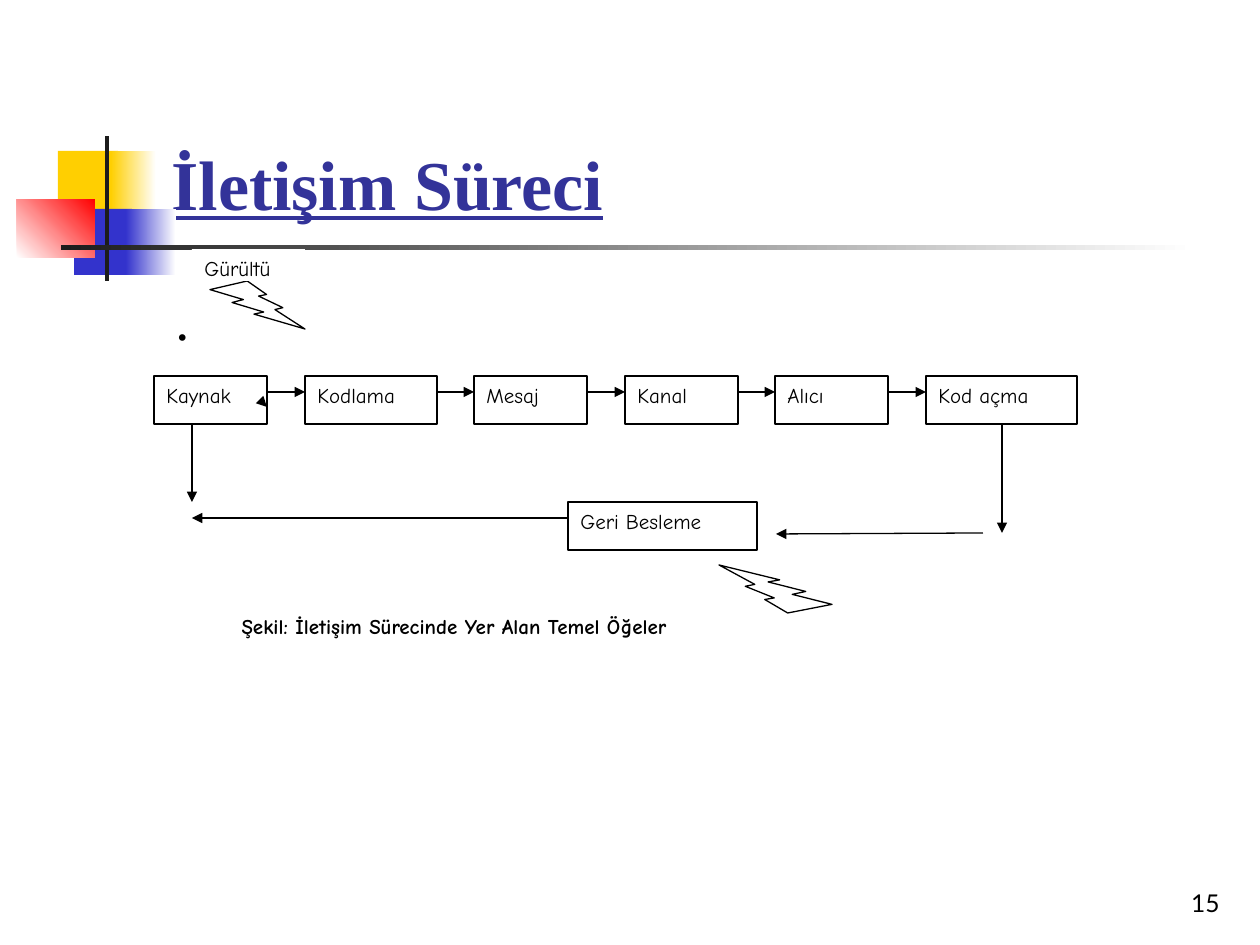
from pptx import Presentation
from pptx import util as u
from pptx.dml.color import RGBColor
from pptx.enum import shapes, text
from pptx.oxml import parse_xml
from pptx.oxml.ns import nsdecls

PX = 914400 / 126
UNIT = 18.83
FLOW_LEFT, FLOW_TOP, BOX_HEIGHT = 154, 376, 48

THEME = {
    "white": "FFFFFF", "black": "000000", "title": "333399",
    "yellow": "FFCF01", "blue": "3333CC", "red": "FF0000", "dark": "1C1C1C",
    "serif": "Times New Roman", "label": "Comic Neue", "number": "Lato",
    "title_size": 40, "body_size": 32, "number_size": 14, "label_size": 12,
    "line": 0.75,
}

TITLE = "İletişim Süreci"
TITLE_PLACE = (159, 29, 1073, 202)
DECORATION = [
    ((58, 151, 60, 66), ["yellow"], 0),
    ((111, 151, 45, 66), ["yellow", "white"], 0),
    ((74, 209, 58, 66), ["blue"], 0),
    ((126, 209, 50, 66), ["blue", "white"], 0),
    ((17, 199, 78, 59), ["white", "red"], 45),
    ((105, 136, 4, 145), ["dark"], 0),
    ((61, 245, 1134, 5), ["dark", "white"], 0),
]
STEPS = [("Kaynak", 6), ("Kodlama", 7), ("Mesaj", 6),
         ("Kanal", 6), ("Alıcı", 6), ("Kod açma", 8)]
STEP_GAP = 2
FEEDBACK = ("Geri Besleme", (568, 502, 189, BOX_HEIGHT))
FEEDBACK_ARROWS = [
    ((266, 406), (267, 407)),
    ((1002, 424), (1002, 533)),
    ((983, 533), (776, 534)),
    ((568, 518), (192, 518)),
    ((192, 424), (192, 502)),
]
NOISE = ("Gürültü", (192, 249, 113, 32))
BOLTS = [((210, 281, 95, 48), 0), ((719, 565, 113, 48), 180)]
CAPTION = ("Şekil: İletişim Sürecinde Yer Alan Temel Öğeler", (171, 607, 566, 48))
BODY = (".", (163, 278, 1071, 567))
NUMBER = ("15", (970, 861, 262, 63))


def emu(*lengths):
    return [u.Emu(round(length * PX)) for length in lengths]


def color(name):
    return RGBColor.from_string(THEME[name])


def write(shape, words, font, size, ink="black", bold=False,
          align=text.PP_ALIGN.LEFT, anchor=text.MSO_ANCHOR.TOP):
    frame = shape.text_frame
    frame.text = words
    frame.word_wrap = True
    frame.auto_size = text.MSO_AUTO_SIZE.NONE
    frame.vertical_anchor = anchor
    paragraph = frame.paragraphs[0]
    paragraph.alignment = align
    paragraph.font.name = THEME[font]
    paragraph.font.size = u.Pt(THEME[size])
    paragraph.font.bold = bold
    paragraph.font.color.rgb = color(ink)
    return paragraph


def add_block(slide, place, fills=("white",), angle=0, outlined=False,
              kind=shapes.MSO_SHAPE.RECTANGLE):
    shape = slide.shapes.add_shape(kind, *emu(*place))
    shape.shadow.inherit = False
    if len(fills) == 1:
        shape.fill.solid()
        shape.fill.fore_color.rgb = color(fills[0])
    else:
        shape.fill.gradient()
        shape.fill.gradient_angle = angle
        for stop, name, position in zip(shape.fill.gradient_stops, fills, (0, 1)):
            stop.color.rgb = color(name)
            stop.position = position
    if outlined:
        shape.line.color.rgb = color("black")
        shape.line.width = u.Pt(THEME["line"])
    else:
        shape.line.fill.background()
    return shape


def add_label(slide, words, place, outlined=True, **style):
    write(add_block(slide, place, outlined=outlined), words, "label", "label_size", **style)


def add_arrow(slide, start, end):
    arrow = slide.shapes.add_connector(shapes.MSO_CONNECTOR.STRAIGHT, *emu(*start, *end))
    arrow.line.color.rgb = color("black")
    arrow.line.width = u.Pt(THEME["line"])
    arrow.line._get_or_add_ln().append(
        parse_xml(f'<a:tailEnd {nsdecls("a")} type="triangle"/>'))
    arrow._element.spPr.append(parse_xml(f'<a:effectLst {nsdecls("a")}/>'))


def add_flow(slide):
    column, previous_right = 0, None
    arrow_y = FLOW_TOP + 16
    for words, columns in STEPS:
        left = round(FLOW_LEFT + column * UNIT)
        width = round(columns * UNIT)
        add_label(slide, words, (left, FLOW_TOP, width, BOX_HEIGHT))
        if previous_right is not None:
            add_arrow(slide, (previous_right, arrow_y), (left, arrow_y))
        previous_right = left + width
        column += columns + STEP_GAP


def main():
    presentation = Presentation()
    presentation.slide_width, presentation.slide_height = emu(1260, 945)
    slide = presentation.slides.add_slide(presentation.slide_layouts[5])

    for place, fills, angle in DECORATION:
        add_block(slide, place, fills, angle)

    title = slide.shapes.title
    title.left, title.top, title.width, title.height = emu(*TITLE_PLACE)
    heading = write(title, TITLE, "serif", "title_size", "title", bold=True,
                    anchor=text.MSO_ANCHOR.BOTTOM)
    heading.font.underline = True

    words, place = NUMBER
    write(slide.shapes.add_textbox(*emu(*place)), words, "number", "number_size",
          align=text.PP_ALIGN.RIGHT, anchor=text.MSO_ANCHOR.BOTTOM)
    words, place = BODY
    write(slide.shapes.add_textbox(*emu(*place)), words, "serif", "body_size")

    add_flow(slide)
    add_label(slide, *FEEDBACK)
    for start, end in FEEDBACK_ARROWS:
        add_arrow(slide, start, end)
    for place, rotation in BOLTS:
        bolt = add_block(slide, place, outlined=True, kind=shapes.MSO_SHAPE.LIGHTNING_BOLT)
        bolt.rotation = rotation
    add_label(slide, *NOISE, outlined=False)
    add_label(slide, *CAPTION, outlined=False, bold=True, align=text.PP_ALIGN.CENTER)

    presentation.save("out.pptx")


if __name__ == "__main__":
    main()
